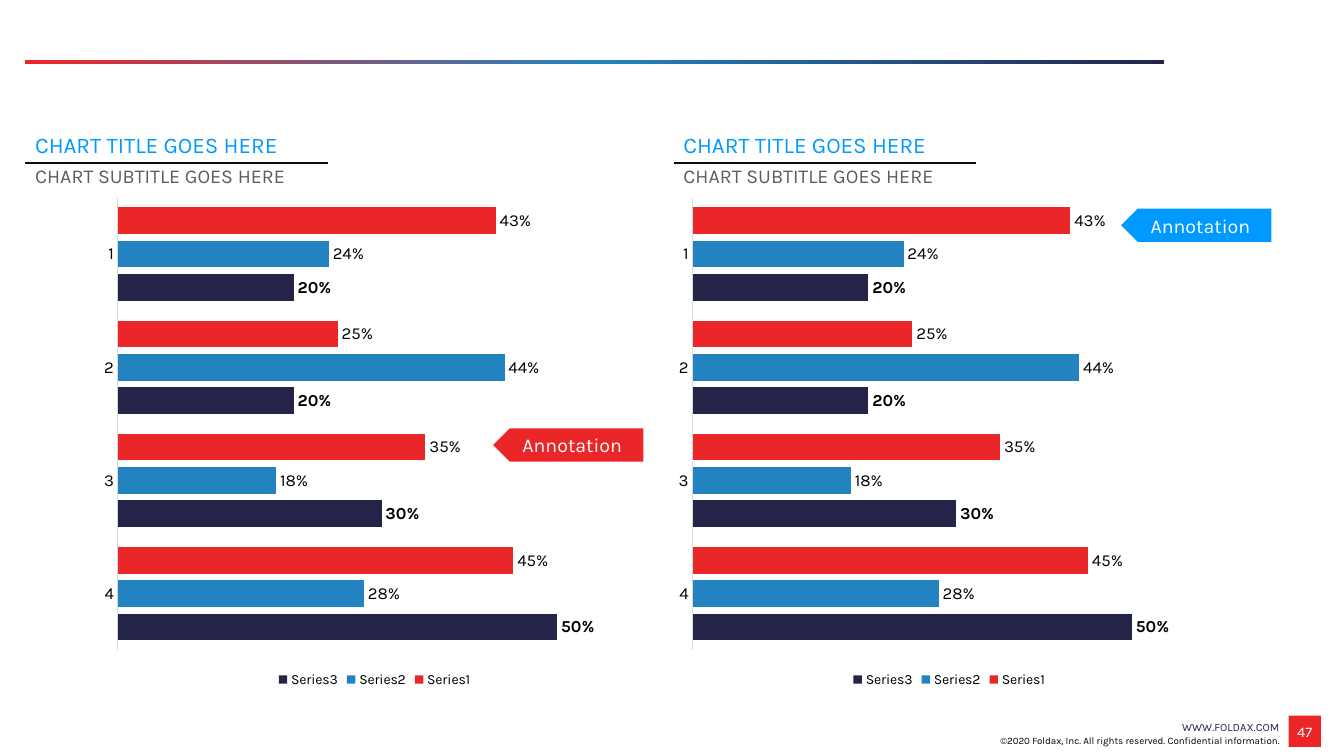
from copy import deepcopy

from pptx import Presentation
from pptx.chart.data import CategoryChartData
from pptx.dml.color import RGBColor
from pptx.enum.chart import XL_CHART_TYPE, XL_LABEL_POSITION, XL_LEGEND_POSITION, XL_TICK_MARK
from pptx.enum.shapes import MSO_CONNECTOR, MSO_SHAPE
from pptx.enum.text import MSO_ANCHOR, PP_ALIGN
from pptx.oxml.ns import qn
from pptx.oxml.xmlchemy import OxmlElement
from pptx.util import Inches, Pt

FONT = "Karla"
RED, BLUE, NAVY, SKY = "EB2628", "2383C1", "242449", "0099FF"
BLACK, WHITE, GREY = "000000", "FFFFFF", "5C5C5C"

CATEGORIES = ["1", "2", "3", "4"]
SERIES = [
    ("Series1", [0.43, 0.25, 0.35, 0.45], RED, False),
    ("Series2", [0.24, 0.44, 0.18, 0.28], BLUE, False),
    ("Series3", [0.20, 0.20, 0.30, 0.50], NAVY, True),
]
TITLE = "CHART TITLE GOES HERE"
SUBTITLE = "CHART SUBTITLE GOES HERE"
PANELS = [
    {"heading_left": 0.25, "chart_left": 0.92},
    {"heading_left": 6.68, "chart_left": 6.62},
]
ANNOTATIONS = [(11.12, 2.07, SKY), (4.89, 4.25, RED)]
HEADING_WIDTH = 3
FOOTER = [
    ("WWW.FOLDAX.COM", (10.45, 7.04, 2.34, 0.34), 8, NAVY, MSO_ANCHOR.MIDDLE),
    ("©2020 Foldax, Inc. All rights reserved. Confidential information.",
     (8.29, 7.05, 4.5, 0.4), 7, BLACK, MSO_ANCHOR.BOTTOM),
]


def color(value):
    return RGBColor.from_string(value)


def style(font, size, value, bold=False):
    font.name = FONT
    font.size = Pt(size)
    font.bold = bold
    font.color.rgb = color(value)


def write(shape, text, size, value, align=PP_ALIGN.LEFT, anchor=MSO_ANCHOR.TOP, inset=None):
    frame = shape.text_frame
    frame.text = text
    frame.word_wrap = True
    frame.vertical_anchor = anchor
    if inset is not None:
        frame.margin_left = frame.margin_right = Inches(inset)
        frame.margin_top = frame.margin_bottom = Inches(inset)
    para = frame.paragraphs[0]
    para.alignment = align
    style(para.runs[0].font, size, value)


def add_text(page, box, *args, **options):
    write(page.shapes.add_textbox(*map(Inches, box)), *args, **options)


def add_block(page, kind, box, fill=None):
    shape = page.shapes.add_shape(kind, *map(Inches, box))
    shape.shadow.inherit = False
    shape.line.fill.background()
    if fill:
        shape.fill.solid()
        shape.fill.fore_color.rgb = color(fill)
    return shape


def add_gradient_bar(page):
    bar = add_block(page, MSO_SHAPE.RECTANGLE, (0.25, 0.6, 11.3, 0.04))
    bar.fill.gradient()
    bar.fill.gradient_angle = 0
    stop_list = bar.element.spPr.find(qn("a:gradFill")).find(qn("a:gsLst"))
    stop_list.append(deepcopy(stop_list[-1]))
    for stop, position, value in zip(bar.fill.gradient_stops, (0, 0.5, 1), (RED, BLUE, NAVY)):
        stop.position = position
        stop.color.rgb = color(value)


def add_heading(page, left):
    add_text(page, (left, 1.25, HEADING_WIDTH, 0.37), TITLE, 16, SKY)
    add_text(page, (left, 1.58, HEADING_WIDTH, 0.34), SUBTITLE, 14, GREY)
    rule = page.shapes.add_connector(
        MSO_CONNECTOR.STRAIGHT, Inches(left), Inches(1.62), Inches(left + HEADING_WIDTH), Inches(1.62))
    rule.line.color.rgb = color("14080C")
    rule.line.width = Pt(1.5)
    rule.element.spPr.append(OxmlElement("a:effectLst"))


def add_bar_chart(page, left):
    data = CategoryChartData(number_format="0%")
    data.categories = CATEGORIES
    for name, values, _, _ in SERIES:
        data.add_series(name, values)
    chart = page.shapes.add_chart(
        XL_CHART_TYPE.BAR_CLUSTERED, Inches(left), Inches(1.86), Inches(5.59), Inches(5), data).chart
    style(chart.font, 10, "B7B7B7")
    chart.has_title = False
    chart.has_legend = True
    chart.legend.position = XL_LEGEND_POSITION.BOTTOM
    chart.legend.include_in_layout = False
    style(chart.legend.font, 10, BLACK)

    category_axis = chart.category_axis
    category_axis.reverse_order = True
    category_axis.major_tick_mark = XL_TICK_MARK.NONE
    category_axis.format.line.color.rgb = color("D9D9D9")
    category_axis.format.line.width = Pt(0.75)
    style(category_axis.tick_labels.font, 12, BLACK)

    value_axis = chart.value_axis
    value_axis.minimum_scale = 0
    value_axis.maximum_scale = 0.6
    value_axis.has_major_gridlines = False
    value_axis.visible = False

    plot = chart.plots[0]
    plot.vary_by_categories = False
    plot.gap_width = 75
    plot.overlap = -25
    for series, (_, _, fill, bold) in zip(plot.series, SERIES):
        series.format.fill.solid()
        series.format.fill.fore_color.rgb = color(fill)
        labels = series.data_labels
        labels.show_value = True
        labels.number_format = "0%"
        labels.number_format_is_linked = False
        labels.position = XL_LABEL_POSITION.OUTSIDE_END
        style(labels.font, 12, BLACK, bold)


def add_annotation(page, left, top, fill):
    tag = add_block(page, MSO_SHAPE.PENTAGON, (left, top, 1.49, 0.33), fill)
    tag.element.spPr.find(qn("a:xfrm")).set("flipH", "1")
    write(tag, "Annotation", 14, WHITE, PP_ALIGN.CENTER, MSO_ANCHOR.MIDDLE, 0.05)


def main():
    deck = Presentation()
    deck.slide_width, deck.slide_height = Inches(13.33), Inches(7.5)
    page = deck.slides.add_slide(deck.slide_layouts[6])
    add_gradient_bar(page)
    for text, box, size, value, anchor in FOOTER:
        add_text(page, box, text, size, value, PP_ALIGN.RIGHT, anchor)
    number = add_block(page, MSO_SHAPE.RECTANGLE, (12.78, 7.1, 0.32, 0.31), RED)
    write(number, "47", 10.5, WHITE, PP_ALIGN.CENTER, MSO_ANCHOR.MIDDLE, 0.02)
    for panel in PANELS:
        add_bar_chart(page, panel["chart_left"])
    for annotation in ANNOTATIONS:
        add_annotation(page, *annotation)
    for panel in PANELS:
        add_heading(page, panel["heading_left"])
    deck.save("out.pptx")


if __name__ == "__main__":
    main()
